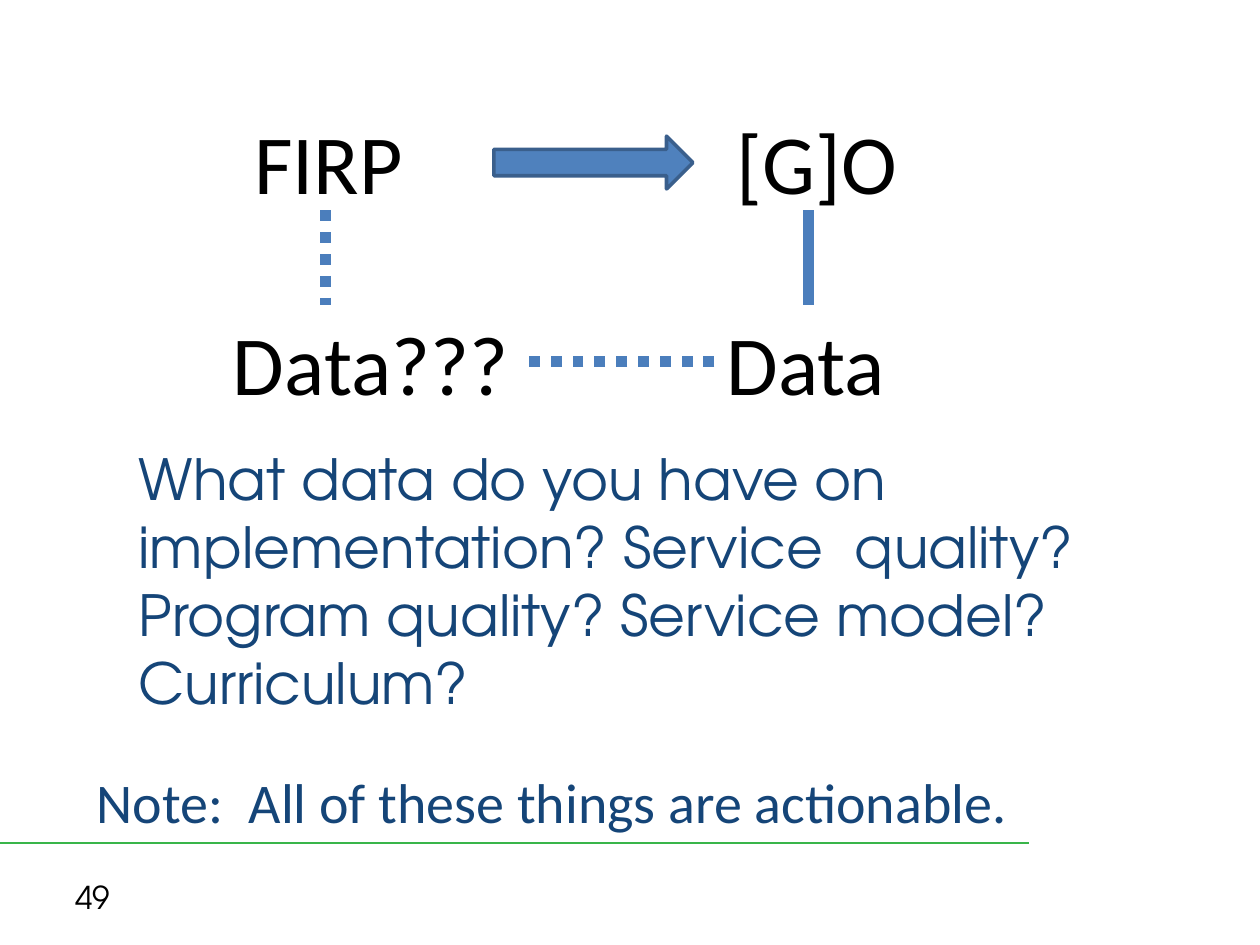
import pptx
import pptx.enum.dml
import pptx.enum.shapes
import pptx.enum.text
import pptx.oxml.ns
import pptx.util
from lxml import etree
from pptx.dml.color import RGBColor
from pptx.util import Inches

COLORS = {
    "text": "000000",
    "navy": "154578",
    "green": "39B54A",
    "link": "4B7EBC",
    "arrow": "4F81BD",
    "arrow_edge": "3A5F8C",
}
ANCHOR = pptx.enum.text.MSO_ANCHOR
DOTTED = pptx.enum.dml.MSO_LINE.ROUND_DOT


class SlideBuilder:
    """Holds the deck's style and the page being built."""

    label_format = {"name": "Calibri", "size": pptx.util.Pt(48)}
    note_format = {"name": "Calibri", "size": pptx.util.Pt(32)}
    title_format = {"name": "TeX Gyre Adventor", "size": pptx.util.Pt(32.4), "bold": False}
    number_format = {"name": "TeX Gyre Adventor", "size": pptx.util.Pt(18)}

    def __init__(self, deck):
        self.page = deck.slides.add_slide(deck.slide_layouts[5])

    def color(self, name):
        return RGBColor.from_string(COLORS[name])

    def fill_text(self, box, text, values, color, anchor):
        frame = box.text_frame
        frame.text = text
        settings = {
            "word_wrap": True,
            "auto_size": pptx.enum.text.MSO_AUTO_SIZE.NONE,
            "vertical_anchor": anchor,
        }
        for name, value in settings.items():
            setattr(frame, name, value)
        para = frame.paragraphs[0]
        para.alignment = pptx.enum.text.PP_ALIGN.LEFT
        font = para.runs[0].font
        for name, value in values.items():
            setattr(font, name, value)
        font.color.rgb = self.color(color)

    def title(self, text, left, top, width, height):
        box = self.page.shapes.title
        place = {"left": left, "top": top, "width": width, "height": height}
        for name, value in place.items():
            setattr(box, name, Inches(value))
        self.fill_text(box, text, self.title_format, "navy", ANCHOR.MIDDLE)

    def text(self, text, place, values, color="text", anchor=ANCHOR.TOP):
        box = self.page.shapes.add_textbox(*map(Inches, place))
        self.fill_text(box, text, values, color, anchor)

    def line(self, start, end, color="link", weight=6.25, dash=None):
        connector = self.page.shapes.add_connector(
            pptx.enum.shapes.MSO_CONNECTOR.STRAIGHT, *map(Inches, start + end))
        connector.line.color.rgb = self.color(color)
        connector.line.width = pptx.util.Pt(weight)
        if dash:
            connector.line.dash_style = dash
        etree.SubElement(connector._element.spPr, pptx.oxml.ns.qn("a:effectLst"))

    def arrow(self, *place):
        shape = self.page.shapes.add_shape(
            pptx.enum.shapes.MSO_SHAPE.RIGHT_ARROW, *map(Inches, place))
        shape.shadow.inherit = False
        shape.fill.solid()
        shape.fill.fore_color.rgb = self.color("arrow")
        shape.line.color.rgb = self.color("arrow_edge")
        shape.line.width = pptx.util.Pt(2)


def main():
    deck = pptx.Presentation()
    deck.slide_width, deck.slide_height = Inches(10), Inches(7.5)
    slide = SlideBuilder(deck)

    slide.line((0, 6.69), (8.17, 6.69), color="green", weight=1.5)
    slide.title("What data do you have on implementation? Service  quality? "
                "Program quality? Service model? Curriculum?", 1, 3.5, 8.75, 2.21)
    slide.text("49", (0.5, 6.92, 2.33, 0.4), slide.number_format, anchor=ANCHOR.MIDDLE)

    top_row, bottom_row = 0.83, 2.42
    labels = [
        ("FIRP", 1.92, top_row, 1.5),
        ("[G]O", 5.75, top_row, 2.33),
        ("Data???", 1.75, bottom_row, 2.42),
        ("Data", 5.67, bottom_row, 2.25),
    ]
    for label, left, top, width in labels:
        slide.text(label, (left, top, width, 0.91), slide.label_format)

    slide.arrow(3.92, 1.08, 1.58, 0.42)
    for x, dash in ((2.58, DOTTED), (6.42, None)):
        slide.line((x, 1.67), (x, bottom_row), dash=dash)
    slide.line((5.67, 2.87), (4.17, 2.87), dash=DOTTED)

    slide.text("Note:  All of these things are actionable.",
               (0.67, 6.04, 8.25, 0.64), slide.note_format, "navy")
    deck.save("out.pptx")


if __name__ == "__main__":
    main()
